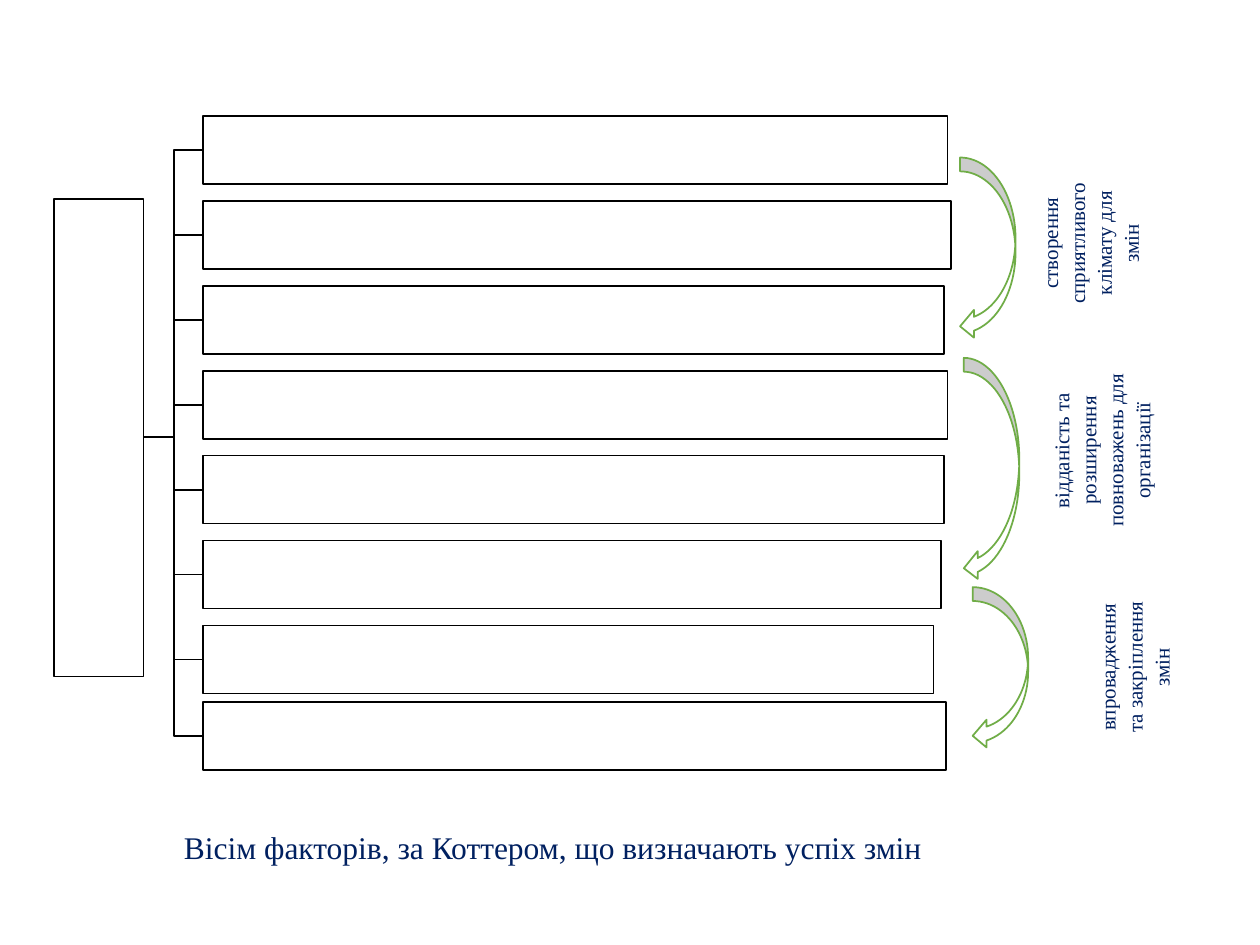
from pptx import Presentation
from pptx.dml.color import RGBColor
from pptx.enum.shapes import MSO_SHAPE
from pptx.enum.text import MSO_ANCHOR, PP_ALIGN
from pptx.util import Inches, Pt

RECTANGLE = MSO_SHAPE.RECTANGLE
CURVED_ARROW = MSO_SHAPE.CURVED_LEFT_ARROW
CENTER, LEFT = PP_ALIGN.CENTER, PP_ALIGN.LEFT
MIDDLE, TOP = MSO_ANCHOR.MIDDLE, MSO_ANCHOR.TOP

BLACK, WHITE, GREEN, NAVY = "000000", "FFFFFF", "70AD47", "002060"


def add_outlined(kind, left, top, width, height, line_color, line_width=1):
    shape = slide.shapes.add_shape(
        kind, Inches(left), Inches(top), Inches(width), Inches(height))
    shape.shadow.inherit = False
    shape.fill.solid()
    shape.fill.fore_color.rgb = RGBColor.from_string(WHITE)
    shape.line.color.rgb = RGBColor.from_string(line_color)
    shape.line.width = Pt(line_width)
    return shape


def write_text(paragraph, text, size, alignment):
    paragraph.alignment = alignment
    run = paragraph.add_run()
    run.text = text
    run.font.name = "Times New Roman"
    run.font.size = Pt(size)
    run.font.color.rgb = RGBColor.from_string(NAVY)


presentation = Presentation()
presentation.slide_width = Inches(10)
presentation.slide_height = Inches(7.5)
slide = presentation.slides.add_slide(presentation.slide_layouts[5])

# Factor boxes: even steps, with the last one set closer
box_left, box_height = 1.61, 0.54
box_widths = [5.91, 5.94, 5.88, 5.91, 5.88, 5.86, 5.8, 5.9]
box_tops = [0.92 + 0.674 * index for index in range(7)] + [5.57]

# Branches from the root box to each factor
root_right, trunk_x, root_y = 1.14, 1.38, 3.47
for top in box_tops:
    branch_y = top + box_height / 2
    builder = slide.shapes.build_freeform(Inches(root_right), Inches(root_y))
    corners = [(trunk_x, root_y), (trunk_x, branch_y), (box_left, branch_y)]
    builder.add_line_segments(
        [(Inches(x), Inches(y)) for x, y in corners], close=False)
    branch = builder.convert_to_shape()
    branch.shadow.inherit = False
    branch.fill.background()
    branch.line.color.rgb = RGBColor.from_string(BLACK)
    branch.line.width = Pt(1)

# Root box, turned on its side
root = add_outlined(RECTANGLE, -1.11, 3.12, 3.79, 0.71, BLACK)
root.rotation = 270

for top, width in zip(box_tops, box_widths):
    add_outlined(RECTANGLE, box_left, top, width, box_height, BLACK)

# Curved arrows spanning the stages
for left, top, height in [(7.62, 1.25, 1.45), (7.65, 2.84, 1.78), (7.72, 4.66, 1.29)]:
    add_outlined(CURVED_ARROW, left, top, 0.44, height, GREEN)

# Stage labels, turned on their side
stages = [
    ("створення сприятливого клімату для змін", 8, 1.4, 1.29, 1.06),
    ("відданість та розширення повноважень для організації", 8.01, 3.05, 1.45, 1.05),
    ("впровадження та закріплення змін", 8.33, 4.8, 1.33, 0.99),
]
for text, left, top, width, height in stages:
    label = add_outlined(RECTANGLE, left, top, width, height, WHITE, 0.5)
    label.rotation = 270
    label.text_frame.word_wrap = True
    label.text_frame.vertical_anchor = MIDDLE
    paragraph = label.text_frame.paragraphs[0]
    paragraph.line_spacing = 1.07
    paragraph.space_after = Pt(8)
    write_text(paragraph, text, 12, CENTER)

# Title below the diagram
title = slide.shapes.title
title.left, title.top = Inches(1.36), Inches(6.52)
title.width, title.height = Inches(6.85), Inches(0.4)
title.text_frame.word_wrap = True
title.text_frame.vertical_anchor = TOP
write_text(title.text_frame.paragraphs[0],
           "Вісім факторів, за Коттером, що визначають успіх змін", 18, LEFT)

presentation.save("out.pptx")
